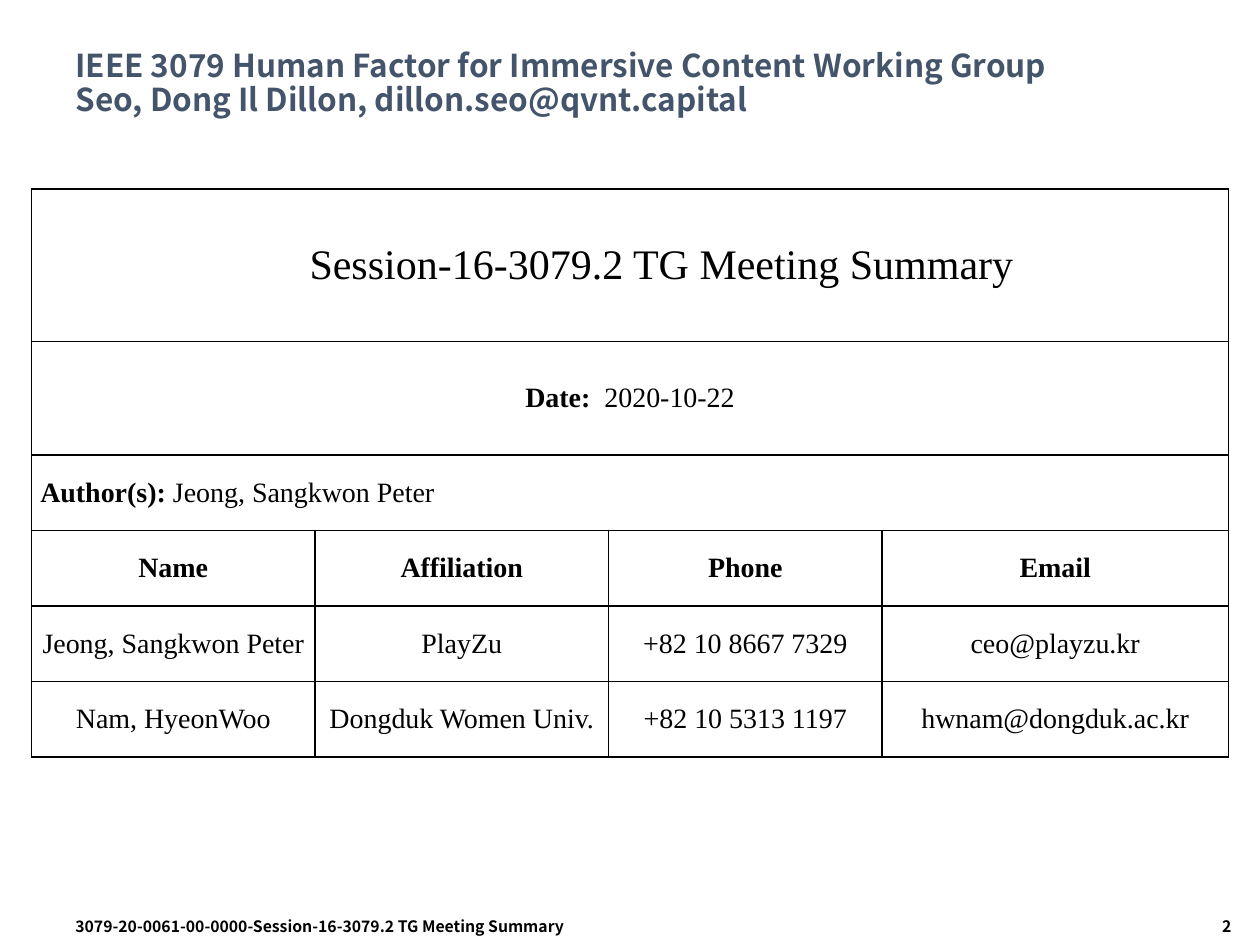
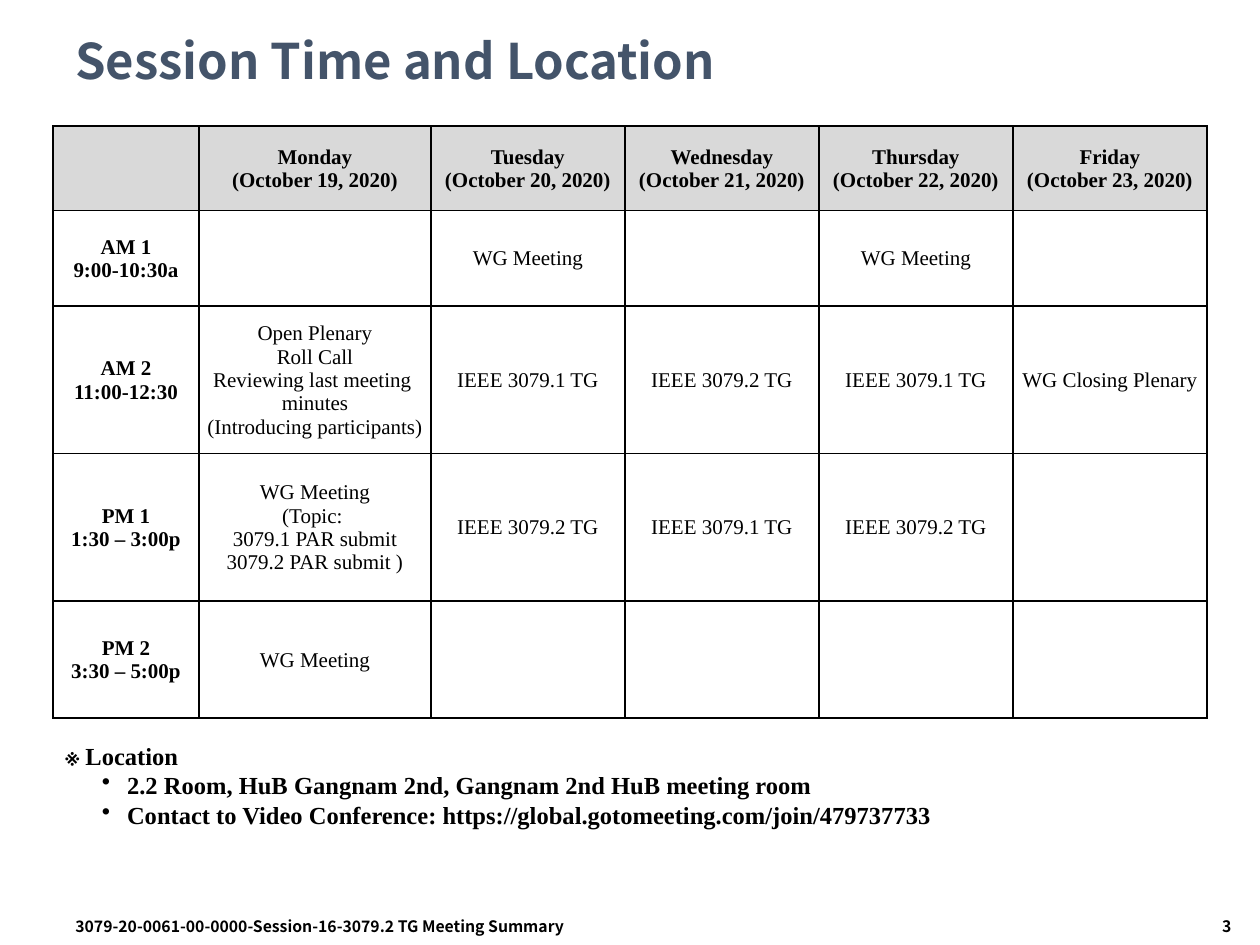
from dataclasses import dataclass

from lxml import etree
from pptx import Presentation, util as u
from pptx.dml.color import RGBColor
from pptx.enum import text
from pptx.oxml import ns

ALIGN = text.PP_ALIGN
MIDDLE = text.MSO_ANCHOR.MIDDLE
FOOTER = "3079-20-0061-00-0000-Session-16-3079.2 TG Meeting Summary"


@dataclass(frozen=True)
class Theme:
    sans: str = "Noto Sans CJK KR"
    serif: str = "Times New Roman"
    ink: str = "000000"
    heading: str = "44546A"
    header_fill: str = "D9D9D9"
    border_width: float = 1
    heading_size: int = 28
    group_size: int = 18
    cover_size: int = 24
    author_size: int = 16
    location_size: int = 14
    schedule_size: int = 12
    footer_size: int = 9


def add_child(parent, tag, **attributes):
    return etree.SubElement(parent, ns.qn(tag), attributes)


class PageBuilder:
    def __init__(self, deck, theme):
        self.deck = deck
        self.theme = theme
        self.page = None

    def new_page(self, number, title, title_height, title_size):
        """Start a slide with its title, footer and page number."""
        theme = self.theme
        self.page = self.deck.slides.add_slide(self.deck.slide_layouts[6])
        box = self.box(0.5, 0.17, 9, title_height)
        box.vertical_anchor = MIDDLE
        para = box.paragraphs[0]
        para.line_spacing = 0.9
        self.set_text(para, title, title_size, True, theme.sans, theme.heading)
        footer = self.box(0.5, 7.23, 5.08, 0.27)
        self.set_text(footer.paragraphs[0], FOOTER, theme.footer_size, True, theme.sans)
        para = self.box(8.25, 7.23, 1.62, 0.27).paragraphs[0]
        para.alignment = ALIGN.RIGHT
        self.set_text(para, str(number), theme.footer_size, True, theme.sans)

    def box(self, left, top, width, height):
        shape = self.page.shapes.add_textbox(*map(u.Inches, (left, top, width, height)))
        shape.text_frame.word_wrap = True
        return shape.text_frame

    def set_text(self, para, words, size, bold=False, face=None, color=None):
        para.text = words
        self.style(para, size, face, color)
        para.font.bold = bold

    def style(self, para, size, face=None, color=None):
        para.font.name = face or self.theme.serif
        para.font.size = u.Pt(size)
        para.font.color.rgb = RGBColor.from_string(color or self.theme.ink)

    def labelled(self, para, label, value, size):
        """Set a bold label followed by a plain value."""
        for words, bold in ((label, True), (value, False)):
            span = para.add_run()
            span.text = words
            span.font.bold = bold
        self.style(para, size)

    def bullet(self, para, indent, hanging):
        props = para._p.get_or_add_pPr()
        props.set("marL", str(u.Inches(indent)))
        props.set("indent", str(-u.Inches(hanging)))
        add_child(props, "a:buChar", char="•")

    def table(self, left, top, widths, heights, margins):
        frame = self.page.shapes.add_table(
            len(heights), len(widths),
            *map(u.Inches, (left, top, sum(widths), sum(heights))))
        table = frame.table
        table.first_row = table.horz_banding = False
        for column, width in zip(table.columns, widths):
            column.width = u.Inches(width)
        for row, height in zip(table.rows, heights):
            row.height = u.Inches(height)
        for cell in table.iter_cells():
            (cell.margin_left, cell.margin_top,
             cell.margin_right, cell.margin_bottom) = map(u.Inches, margins)
            cell.vertical_anchor = MIDDLE
            self.border(cell)
            cell.fill.background()
        return table

    def border(self, cell):
        props = cell._tc.get_or_add_tcPr()
        for side in ("a:lnL", "a:lnR", "a:lnT", "a:lnB"):
            line = add_child(props, side, w=str(u.Pt(self.theme.border_width)))
            fill = add_child(line, "a:solidFill")
            add_child(fill, "a:srgbClr", val=self.theme.ink)

    def fill_cell(self, cell, paragraphs, size, bold=False):
        frame = cell.text_frame
        for index, words in enumerate(paragraphs):
            para = frame.add_paragraph() if index else frame.paragraphs[0]
            para.alignment = ALIGN.CENTER
            self.set_text(para, words, size, bold)


def build_cover(builder):
    theme = builder.theme
    builder.new_page(
        2,
        "IEEE 3079 Human Factor for Immersive Content Working Group\n"
        "Seo, Dong Il Dillon, dillon.seo@qvnt.capital",
        1, theme.group_size)
    table = builder.table(0.25, 1.5, [2.25, 2.33, 2.17, 2.75],
                          [1.21, 0.9] + [0.6] * 4, (0.07, 0, 0.07, 0))
    for row in range(3):
        table.cell(row, 0).merge(table.cell(row, 3))

    subject, date, authors = (table.cell(row, 0).text_frame.paragraphs[0]
                              for row in range(3))
    for para in (subject, date):
        para.alignment = ALIGN.CENTER
        para.space_after = u.Pt(12)
    subject._p.get_or_add_pPr().set("marL", str(u.Inches(0.5)))
    builder.set_text(subject, "Session-16-3079.2 TG Meeting Summary", theme.cover_size)
    builder.labelled(date, "Date: ", " 2020-10-22", theme.author_size)
    builder.labelled(authors, "Author(s): ", "Jeong, Sangkwon Peter", theme.author_size)

    contacts = [
        ("Name", "Affiliation", "Phone", "Email"),
        ("Jeong, Sangkwon Peter", "PlayZu", "+82 10 8667 7329", "ceo@playzu.kr"),
        ("Nam, HyeonWoo", "Dongduk Women Univ.", "+82 10 5313 1197",
         "hwnam@dongduk.ac.kr"),
    ]
    for row, contact in enumerate(contacts, start=3):
        for column, words in enumerate(contact):
            builder.fill_cell(table.cell(row, column), [words],
                              theme.author_size, bold=row == 3)


def build_schedule(builder):
    theme = builder.theme
    builder.new_page(3, "Session Time and Location", 0.67, theme.heading_size)
    table = builder.table(0.42, 1, [1.16, 1.84] + [1.54] * 4,
                          [0.67, 0.76, 1.17, 1.17, 0.93], (0.01, 0.01, 0.01, 0))
    weekdays = ("Monday", "Tuesday", "Wednesday", "Thursday", "Friday")
    header = [[""]] + [[day, f"(October {date}, 2020)"]
                       for date, day in enumerate(weekdays, start=19)]
    group, first, second = ["WG Meeting"], ["IEEE 3079.1 TG"], ["IEEE 3079.2 TG"]
    free = [""]
    plenary = ["Open Plenary", "Roll Call", "Reviewing last meeting \nminutes",
               "(Introducing participants)"]
    submissions = ["WG Meeting", "(Topic: \n3079.1 PAR submit\n3079.2 PAR submit )"]
    schedule = [
        header,
        [["AM 1", "9:00-10:30a"], free, group, free, group, free],
        [["AM 2", "11:00-12:30"], plenary, first, second, first,
         ["WG Closing Plenary"]],
        [["PM 1", "1:30 – 3:00p"], submissions, second, first, second, free],
        [["PM 2", "3:30 – 5:00p"], group, free, free, free, free],
    ]
    for row, slots in enumerate(schedule):
        for column, paragraphs in enumerate(slots):
            cell = table.cell(row, column)
            builder.fill_cell(cell, paragraphs, theme.schedule_size,
                              bold=row == 0 or column == 0)
            if row == 0:
                cell.fill.solid()
                cell.fill.fore_color.rgb = RGBColor.from_string(theme.header_fill)

    location = builder.box(0.42, 5.83, 9.17, 0.81)
    builder.set_text(location.paragraphs[0], "※ Location", theme.location_size, True)
    for words in (
        "2.2 Room, HuB Gangnam 2nd, Gangnam 2nd HuB meeting room",
        "Contact to Video Conference: https://global.gotomeeting.com/join/479737733",
    ):
        para = location.add_paragraph()
        builder.bullet(para, 0.49, 0.2)
        builder.set_text(para, words, theme.location_size, True)


def main():
    deck = Presentation()
    deck.slide_width, deck.slide_height = u.Inches(10), u.Inches(7.5)
    builder = PageBuilder(deck, Theme())
    build_cover(builder)
    build_schedule(builder)
    deck.save("out.pptx")


if __name__ == "__main__":
    main()
